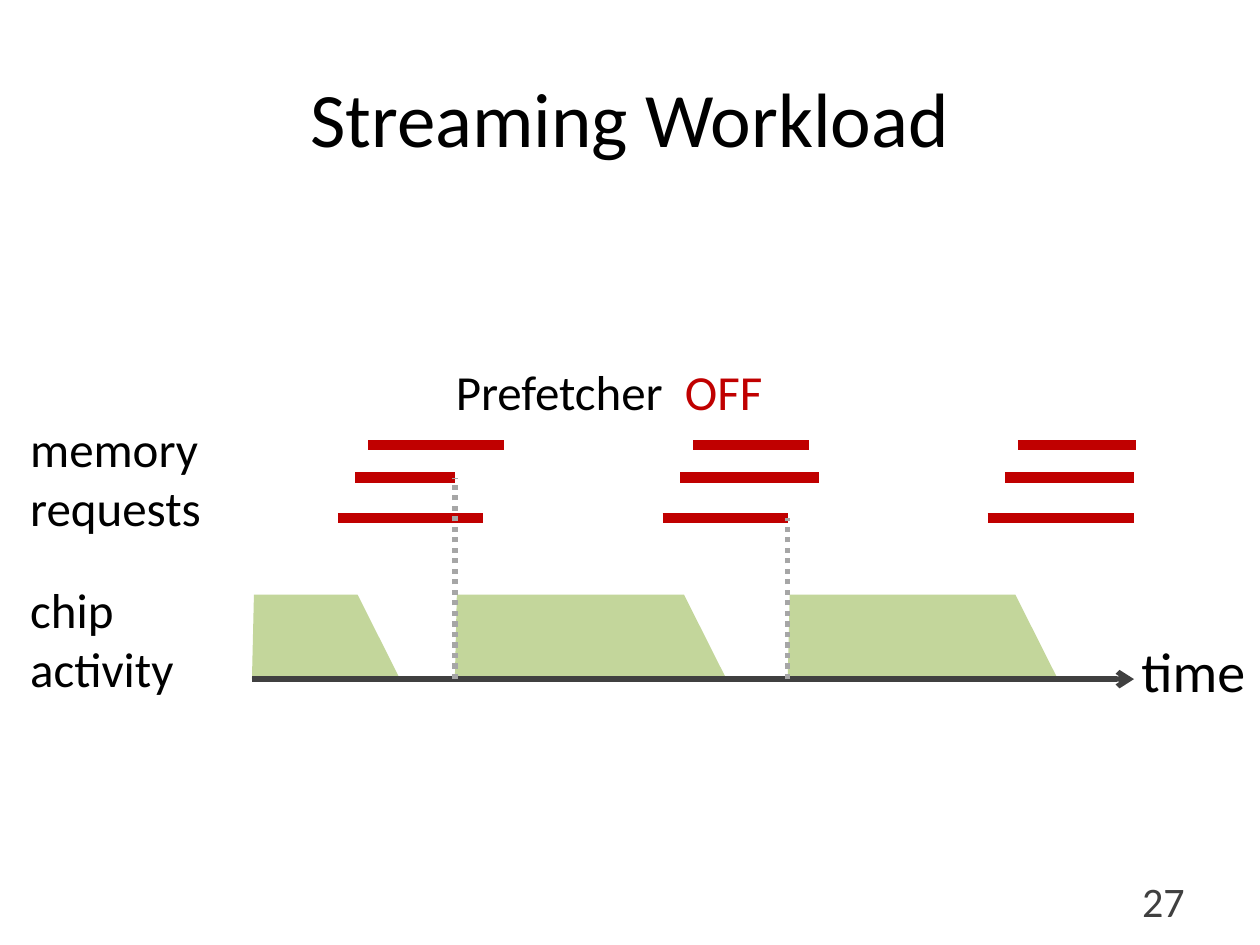
from lxml.etree import SubElement
from pptx import Presentation
from pptx.dml.color import RGBColor
from pptx.enum.dml import MSO_LINE_DASH_STYLE as Dash
from pptx.enum.shapes import MSO_CONNECTOR as Connector
from pptx.enum.text import MSO_ANCHOR as Anchor, PP_ALIGN as Align
from pptx.oxml.ns import qn
from pptx.util import Cm, Pt

BLACK, RED, GREEN = "000000", "C00000", "C3D69B"
DARK_GRAY, LIGHT_GRAY = "404040", "A6A6A6"

presentation = Presentation()
presentation.slide_width, presentation.slide_height = Cm(25.4), Cm(19.05)
slide = presentation.slides.add_slide(presentation.slide_layouts[6])


def add_text(paragraphs, left, top, width, height, size=28, align=Align.LEFT,
             anchor=Anchor.TOP, wrap=False):
    """Each paragraph is a list of (text, color) runs."""
    box = slide.shapes.add_textbox(Cm(left), Cm(top), Cm(width), Cm(height))
    frame = box.text_frame
    frame.word_wrap, frame.vertical_anchor = wrap, anchor
    for index, runs in enumerate(paragraphs):
        paragraph = frame.add_paragraph() if index else frame.paragraphs[0]
        paragraph.alignment = align
        for text, color in runs:
            run = paragraph.add_run()
            run.text = text
            run.font.name, run.font.size = "Calibri", Pt(size)
            run.font.color.rgb = RGBColor.from_string(color)


def add_line(x1, y1, x2, y2, color, width, dash=None, arrow=False):
    connector = slide.shapes.add_connector(
        Connector.STRAIGHT, Cm(x1), Cm(y1), Cm(x2), Cm(y2))
    line = connector.line
    line.color.rgb = RGBColor.from_string(color)
    line.width = Pt(width)
    if dash:
        line.dash_style = dash
    if arrow:
        SubElement(line._ln, qn("a:tailEnd"), type="arrow")
    SubElement(connector._element.spPr, qn("a:effectLst"))


# Chip activity: blocks that ramp down to the time axis
axis_y, block_top, ramp_width = 13.69, 11.99, 0.83
for left, shoulder in [(5.08, 7.21), (9.17, 13.79), (15.88, 20.47)]:
    corners = [(left + 0.04, block_top), (shoulder, block_top),
               (shoulder + ramp_width, axis_y - 0.05), (left, axis_y)]
    points = [(round(x * 100), round(y * 100)) for x, y in corners]
    builder = slide.shapes.build_freeform(*points[0], scale=Cm(0.01))
    builder.add_line_segments(points[1:], close=True)
    block = builder.convert_to_shape()
    block.fill.solid()
    block.fill.fore_color.rgb = RGBColor.from_string(GREEN)
    block.line.fill.background()
    block.shadow.inherit = False

# Memory requests: each row repeats its start once per burst
burst_step = 6.55
request_rows = [
    (8.97, 7.42, [10.16, 16.31, 22.91]),
    (9.63, 7.16, [9.17, 16.51, 22.86]),
    (10.44, 6.81, [9.73, 15.88, 22.86]),
]
for y, first_start, ends in request_rows:
    for burst, end in enumerate(ends):
        add_line(first_start + burst * burst_step, y, end, y, RED, 6)

# Time axis, and dotted links from a finished request to the next activity
add_line(5.08, axis_y, 22.86, axis_y, DARK_GRAY, 3, arrow=True)
for x, request_y in [(9.17, 9.63), (15.88, 10.44)]:
    add_line(x, axis_y, x, request_y, LIGHT_GRAY, 3, dash=Dash.ROUND_DOT)

# Labels
add_text([[("memory", BLACK)], [("requests", BLACK)]], 0.36, 8.31, 3.99, 2.64)
add_text([[("chip", BLACK)], [("activity", BLACK)]], 0.36, 11.56, 3.43, 2.64)
add_text([[("time", BLACK)]], 22.76, 12.7, 2.64, 1.63, size=32)
add_text([[("Prefetcher ", BLACK), (" OFF", RED)]], 8.94, 7.16, 6.76, 1.45)

# Title and slide number
add_text([[("Streaming Workload", BLACK)]], 1.27, 0.76, 22.86, 3.18, size=44,
         align=Align.CENTER, anchor=Anchor.MIDDLE, wrap=True)
add_text([[("27", DARK_GRAY)]], 18.21, 17.65, 5.92, 1.02, size=24,
         align=Align.RIGHT, anchor=Anchor.MIDDLE, wrap=True)

presentation.save("out.pptx")
